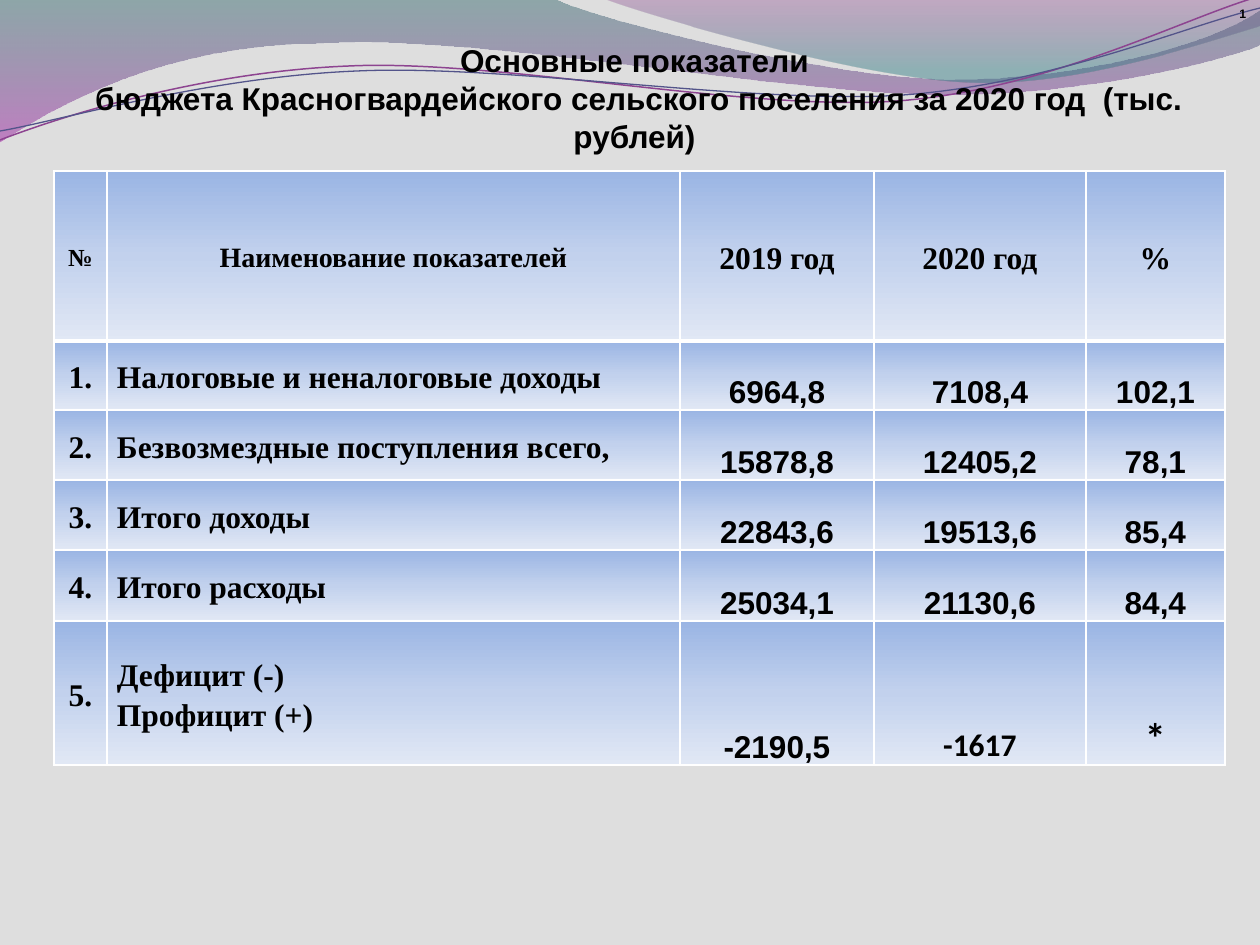
import math

from lxml import etree
from pptx import Presentation
from pptx import util as u
from pptx.dml.color import RGBColor
from pptx.enum import text as t
from pptx.oxml.ns import qn

PX = 914400 / 126
BACK = RGBColor(0xDE, 0xDE, 0xDE)
BLACK = RGBColor(0, 0, 0)
WHITE = RGBColor(0xFF, 0xFF, 0xFF)
TEAL = RGBColor(0x2D, 0x63, 0x68)
VIOLET = RGBColor(0xA5, 0x30, 0xA9)
PLUM = RGBColor(0x7F, 0x2F, 0x82)
AQUA = RGBColor(0x2F, 0x7B, 0x82)
PURPLE = RGBColor(0x8D, 0x44, 0x90)
INDIGO = RGBColor(0x53, 0x54, 0x8A)
CELL = [(0, RGBColor(0x9A, 0xB5, 0xE4), 100),
        (50, RGBColor(0xC2, 0xD1, 0xED), 100),
        (100, RGBColor(0xE1, 0xE8, 0xF5), 100)]
SERIF = "Times New Roman"
SANS = "Arial"
TILT = -2.7

WAVE = [(0, -1), (554, -1), (600, 21, 837, 79, 955, 79),
        (1075, 79, 1207, 47, 1260, 11), (1261, 45),
        (1239, 55, 1096, 96, 940, 94), (784, 94, 481, 35, 324, 43),
        (163, 44, 58, 105, -1, 142)]
CREST = [(604, -1), (641, 14, 859, 78, 969, 82),
         (1079, 87, 1211, 40, 1260, 26), (1260, 0)]
UPPER = [(0, 140), (60, 117, 199, 72, 349, 66),
         (498, 59, 747, 112, 898, 101), (1050, 89, 1182, 19, 1257, -3)]
LOWER = [(0, 131), (59, 121, 207, 77, 357, 71),
         (508, 64, 752, 105, 903, 95), (1053, 84, 1185, 26, 1260, 8)]

COLS = [53, 573, 194, 212, 139]
ROWS = [170, 69, 70, 70, 71, 144]
DATA = [
    ["№", "Наименование показателей", "2019 год", "2020 год", "%"],
    ["1.", "Налоговые и неналоговые доходы", "6964,8", "7108,4", "102,1"],
    ["2.", "Безвозмездные поступления всего,", "15878,8", "12405,2", "78,1"],
    ["3.", "Итого доходы", "22843,6", "19513,6", "85,4"],
    ["4.", "Итого расходы", "25034,1", "21130,6", "84,4"],
    ["5.", "Дефицит (-)\vПрофицит (+)", "-2190,5", "-1617", "*"],
]
SIZES = {(0, 0): 14, (0, 1): 16, (5, 4): 24}
FONTS = {(5, 3): "Calibri", (5, 4): "Calibri"}


def px(n):
    return u.Emu(round(n * PX))


def write(frame, words, size=18, font=SANS, align=None, space=None):
    frame.text = words
    for para in frame.paragraphs:
        para.alignment = align
        para.line_spacing = space
        for run in para.runs:
            run.font.size = u.Pt(size)
            run.font.name = font
            run.font.bold = True
            run.font.color.rgb = BLACK


def label(slide, box, words, wrap=True, **form):
    frame = slide.shapes.add_textbox(*map(px, box)).text_frame
    frame.word_wrap = wrap
    frame.auto_size = t.MSO_AUTO_SIZE.SHAPE_TO_FIT_TEXT
    write(frame, words, **form)


def blend(fill, node, stops):
    fill.gradient()
    fill.gradient_angle = 270
    group = node.find(qn("a:gradFill")).find(qn("a:gsLst"))
    group.clear()
    for pos, color, alpha in stops:
        stop = etree.SubElement(group, qn("a:gs"), pos=str(pos * 1000))
        tint = etree.SubElement(stop, qn("a:srgbClr"), val=str(color))
        if alpha < 100:
            etree.SubElement(tint, qn("a:alpha"), val=str(alpha * 1000))


def local(x, y, box, tilt):
    left, top, width, height = box
    turn = math.radians(-tilt)
    dx, dy = x - left - width / 2, y - top - height / 2
    return (px(dx * math.cos(turn) - dy * math.sin(turn) + width / 2),
            px(dx * math.sin(turn) + dy * math.cos(turn) + height / 2))


def curve(slide, box, steps, tilt=0, close=False):
    left, top, width, height = box
    right, low = left + width, top + height
    pen = slide.shapes.build_freeform(px(left), px(top), scale=1.0)
    pen.add_line_segments([(px(right), px(top)), (px(right), px(low)),
                           (px(left), px(low))])
    shape = pen.convert_to_shape()
    shape.shadow.inherit = False
    shape.rotation = tilt
    route = next(shape.element.iter(qn("a:path")))
    for child in list(route):
        route.remove(child)
    for i, step in enumerate(steps):
        kind = "cubicBezTo" if len(step) == 6 else "lnTo" if i else "moveTo"
        part = etree.SubElement(route, qn("a:" + kind))
        for spot in zip(step[::2], step[1::2]):
            x, y = local(*spot, box, tilt)
            etree.SubElement(part, qn("a:pt"), x=str(x), y=str(y))
    if close:
        etree.SubElement(route, qn("a:close"))
    return shape


def band(slide, box, steps, stops):
    shape = curve(slide, box, steps, close=True)
    blend(shape.fill, shape.element.spPr, stops)
    shape.line.fill.background()


def strand(slide, box, steps, color, width):
    shape = curve(slide, box, steps, TILT)
    shape.fill.background()
    shape.line.color.rgb = color
    shape.line.width = u.Pt(width)


def border(node, sides):
    for side, width in sides.items():
        line = etree.SubElement(node, qn("a:ln" + side), w=str(u.Pt(width)))
        fill = etree.SubElement(line, qn("a:solidFill"))
        etree.SubElement(fill, qn("a:srgbClr"), val=str(WHITE))


def style(cell, words, row, col):
    figure = row > 0 and col > 1
    cell.margin_left = cell.margin_right = px(10)
    cell.margin_top = cell.margin_bottom = 0
    cell.vertical_anchor = t.MSO_ANCHOR.BOTTOM if figure else t.MSO_ANCHOR.MIDDLE
    write(cell.text_frame, words, space=1.15,
          size=SIZES.get((row, col), 18),
          font=FONTS.get((row, col), SANS if figure else SERIF),
          align=None if row and col == 1 else t.PP_ALIGN.CENTER)
    node = cell._tc.get_or_add_tcPr()
    border(node, {"L": 1, "R": 1, "T": 3 if row == 1 else 1,
                  "B": 3 if row == 0 else 1})
    blend(cell.fill, node, CELL)


def grid(slide, left, top):
    table = slide.shapes.add_table(len(ROWS), len(COLS), px(left), px(top),
                                   px(sum(COLS)), px(sum(ROWS))).table
    table.horz_banding = False
    for col, width in zip(table.columns, COLS):
        col.width = px(width)
    for row, height in zip(table.rows, ROWS):
        row.height = px(height)
    for r, line in enumerate(DATA):
        for c, words in enumerate(line):
            style(table.cell(r, c), words, r, c)


def main():
    deck = Presentation()
    deck.slide_width, deck.slide_height = px(1260), px(945)
    slide = deck.slides.add_slide(deck.slide_layouts[6])
    slide.background.fill.solid()
    slide.background.fill.fore_color.rgb = BACK
    band(slide, (-1, -1, 1262, 143), WAVE, [(0, TEAL, 45), (100, VIOLET, 55)])
    band(slide, (604, -1, 656, 88), CREST, [(0, PLUM, 30), (80, AQUA, 45)])
    strand(slide, (-2, 28, 1262, 89), UPPER, PURPLE, 0.85)
    strand(slide, (-2, 38, 1263, 73), LOWER, INDIGO, 0.75)
    label(slide, (54, 35, 1161, 127),
          "Основные показатели\n бюджета Красногвардейского сельского "
          "поселения за 2020 год  (тыс. рублей)", align=t.PP_ALIGN.CENTER)
    label(slide, (1227, 0, 33, 28), "1", wrap=False, size=7)
    grid(slide, 54, 171)
    deck.save("out.pptx")


if __name__ == "__main__":
    main()
